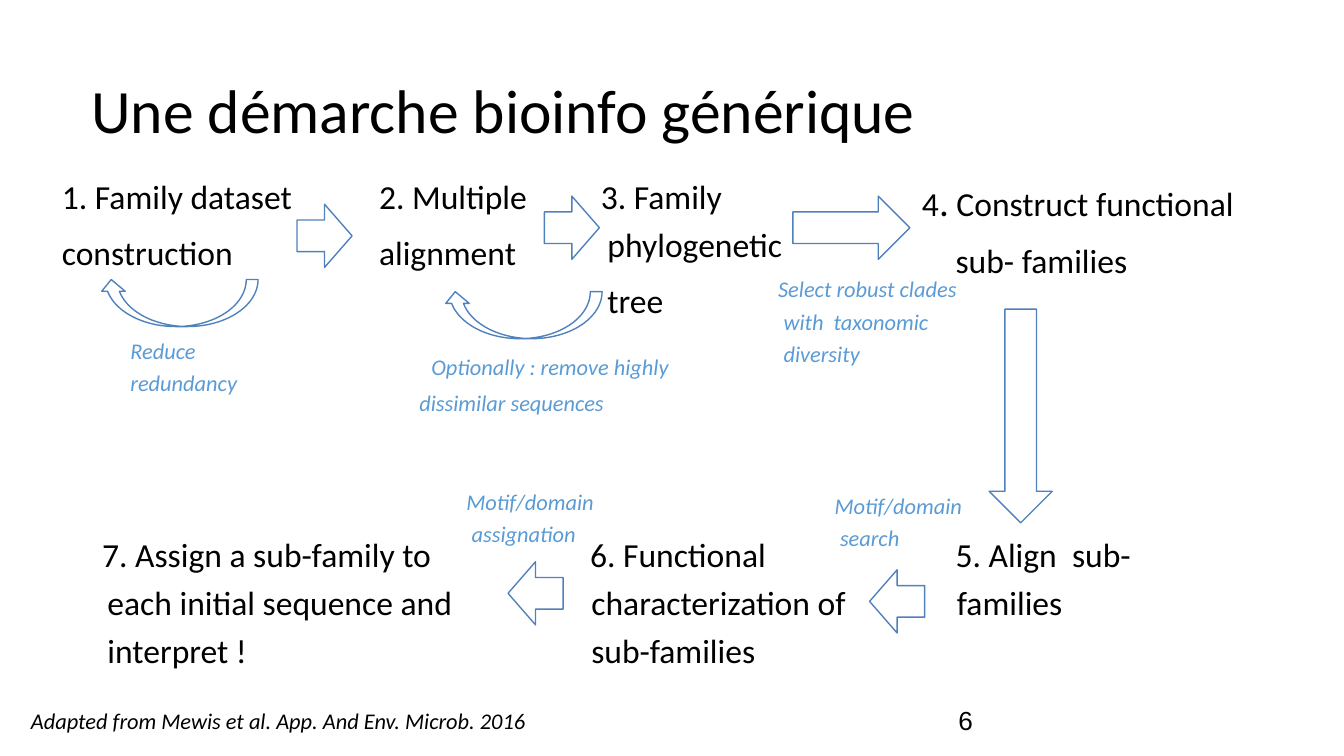
import pptx
import pptx.dml.color
import pptx.enum.shapes
import pptx.enum.text
import pptx.util

Inches = pptx.util.Inches
Pt = pptx.util.Pt
SHAPES = pptx.enum.shapes.MSO_SHAPE
ANCHOR = pptx.enum.text.MSO_ANCHOR

COLORS = {"text": "000000", "note": "5B9BD5", "arrow": "4F81BD"}
# Left margin and first-line indent
FLUSH = (0, 0)
STEP_INDENT = (0.28, -0.01)
NOTE_INDENT = (0.28, -0.04)

# Each label: left, top, width, height, [(text, (margin, indent)), ...]
STEPS = [
    (0.39, 1.21, 1.95, 0.8, [("1. Family dataset", FLUSH), ("construction", FLUSH)]),
    (2.75, 1.21, 1.48, 1, [("2. Multiple", FLUSH), ("alignment", FLUSH)]),
    (4.17, 1.21, 2.25, 1.24, [("3. Family phylogenetic", (0.28, -0.05)), ("tree", (0.28, 0))]),
    (6.77, 3.87, 2.07, 0.94, [("5. Align  sub-families", STEP_INDENT)]),
    (4.05, 3.87, 2.42, 0.94, [("6. Functional characterization of sub-families", STEP_INDENT)]),
    (0.45, 3.87, 3.17, 1.16,
     [("7. Assign a sub-family to each initial sequence and interpret !", NOTE_INDENT)]),
]
NOTES = [
    (0.62, 2.43, 1.59, 0.94, [("Reduce redundancy", (0.28, 0))]),
    (2.86, 2.55, 2.24, 1,
     [("Optionally : remove highly", (0.28, 0)), ("dissimilar sequences", (0.19, 0))]),
    (5.48, 1.97, 1.92, 1.38, [("Select robust clades with  taxonomic diversity", NOTE_INDENT)]),
    (5.9, 3.58, 1.62, 0.84, [("Motif/domain search", NOTE_INDENT)]),
    (3.16, 3.55, 1.92, 0.84, [("Motif/domain assignation", NOTE_INDENT)]),
]
ARROWS = [
    (SHAPES.RIGHT_ARROW, 2.21, 1.52, 0.41, 0.47),
    (SHAPES.RIGHT_ARROW, 4.05, 1.46, 0.41, 0.47),
    (SHAPES.RIGHT_ARROW, 5.9, 1.46, 0.87, 0.47),
    (SHAPES.DOWN_ARROW, 7.36, 2.3, 0.47, 1.59),
    (SHAPES.LEFT_ARROW, 6.47, 4.24, 0.41, 0.47),
    (SHAPES.LEFT_ARROW, 3.78, 4.18, 0.41, 0.47),
]
LOOPS = [(0.74, 2.08), (3.3, 2.17)]


def rgb(name):
    return pptx.dml.color.RGBColor.from_string(COLORS[name])


def set_frame(frame, anchor=ANCHOR.TOP):
    frame.word_wrap = True
    frame.auto_size = pptx.enum.text.MSO_AUTO_SIZE.NONE
    frame.vertical_anchor = anchor
    frame.margin_left = frame.margin_right = Inches(0.07)
    frame.margin_top = frame.margin_bottom = Inches(0.04)


def set_font(paragraph, size, color="text", italic=False, name="Calibri"):
    font = paragraph.font
    font.name, font.size, font.italic = name, Pt(size), italic
    font.color.rgb = rgb(color)


def add_title(slide, text):
    title = slide.shapes.title
    title.left, title.top = Inches(0.61), Inches(0.3)
    title.width, title.height = Inches(9.54), Inches(1.09)
    set_frame(title.text_frame, ANCHOR.MIDDLE)
    paragraph = title.text_frame.paragraphs[0]
    paragraph.text = text
    paragraph.alignment = pptx.enum.text.PP_ALIGN.LEFT
    paragraph.line_spacing = 0.9
    set_font(paragraph, 33)


def add_text(slide, left, top, width, height, lines, size, gap=0, spacing=1.2,
             anchor=ANCHOR.TOP, **font):
    box = slide.shapes.add_textbox(Inches(left), Inches(top), Inches(width), Inches(height))
    frame = box.text_frame
    set_frame(frame, anchor)
    for index, (text, (margin, indent)) in enumerate(lines):
        paragraph = frame.add_paragraph() if index else frame.paragraphs[0]
        paragraph.text = text
        paragraph.line_spacing = spacing
        if index:
            paragraph.space_before = Pt(gap)
        properties = paragraph._p.get_or_add_pPr()
        properties.set("marL", str(Inches(margin)))
        properties.set("indent", str(Inches(indent)))
        set_font(paragraph, size, **font)
    return frame


def add_construct_step(slide):
    lines = [("4", (0.26, 0)), ("sub- families", (0.51, 0))]
    frame = add_text(slide, 6.53, 1.21, 2.81, 0.92, lines, 18, gap=4)
    paragraph = frame.paragraphs[0]
    # The full stop is larger than the words around it
    dot = paragraph.add_run()
    dot.text = "."
    dot.font.size = Pt(21)
    paragraph.add_run().text = " Construct functional"


def add_arrow(slide, kind, left, top, width, height):
    arrow = slide.shapes.add_shape(
        kind, Inches(left), Inches(top), Inches(width), Inches(height))
    arrow.shadow.inherit = False
    arrow.fill.background()
    arrow.line.color.rgb = rgb("arrow")
    arrow.line.width = Pt(0.75)
    return arrow


def add_loop(slide, left, top):
    loop = add_arrow(slide, SHAPES.CURVED_UP_ARROW, left, top, 1.18, 0.35)
    loop._element.spPr.xfrm.set("flipH", "1")


def main():
    presentation = pptx.Presentation()
    # Widescreen, 16 to 9
    presentation.slide_width = Inches(10)
    presentation.slide_height = Inches(10) * 9 // 16
    slide = presentation.slides.add_slide(presentation.slide_layouts[5])
    add_title(slide, "Une démarche bioinfo générique")

    # Numbered steps and the notes between them
    for step in STEPS:
        add_text(slide, *step, 18, gap=4)
    add_construct_step(slide)
    for note in NOTES:
        add_text(slide, *note, 12, gap=2, color="note", italic=True)

    # Arrows from step to step, and loops back on a step
    for arrow in ARROWS:
        add_arrow(slide, *arrow)
    for loop in LOOPS:
        add_loop(slide, *loop)

    # Source and page number
    source = "Adapted from Mewis et al. App. And Env. Microb. 2016"
    add_text(slide, 0.16, 5.22, 4.25, 0.28, [(source, FLUSH)], 12, spacing=1, italic=True)
    add_text(slide, 7.06, 5.21, 2.25, 0.3, [("6", FLUSH)], 14, spacing=1,
             anchor=ANCHOR.MIDDLE, name="Arial")
    presentation.save("out.pptx")


if __name__ == "__main__":
    main()
